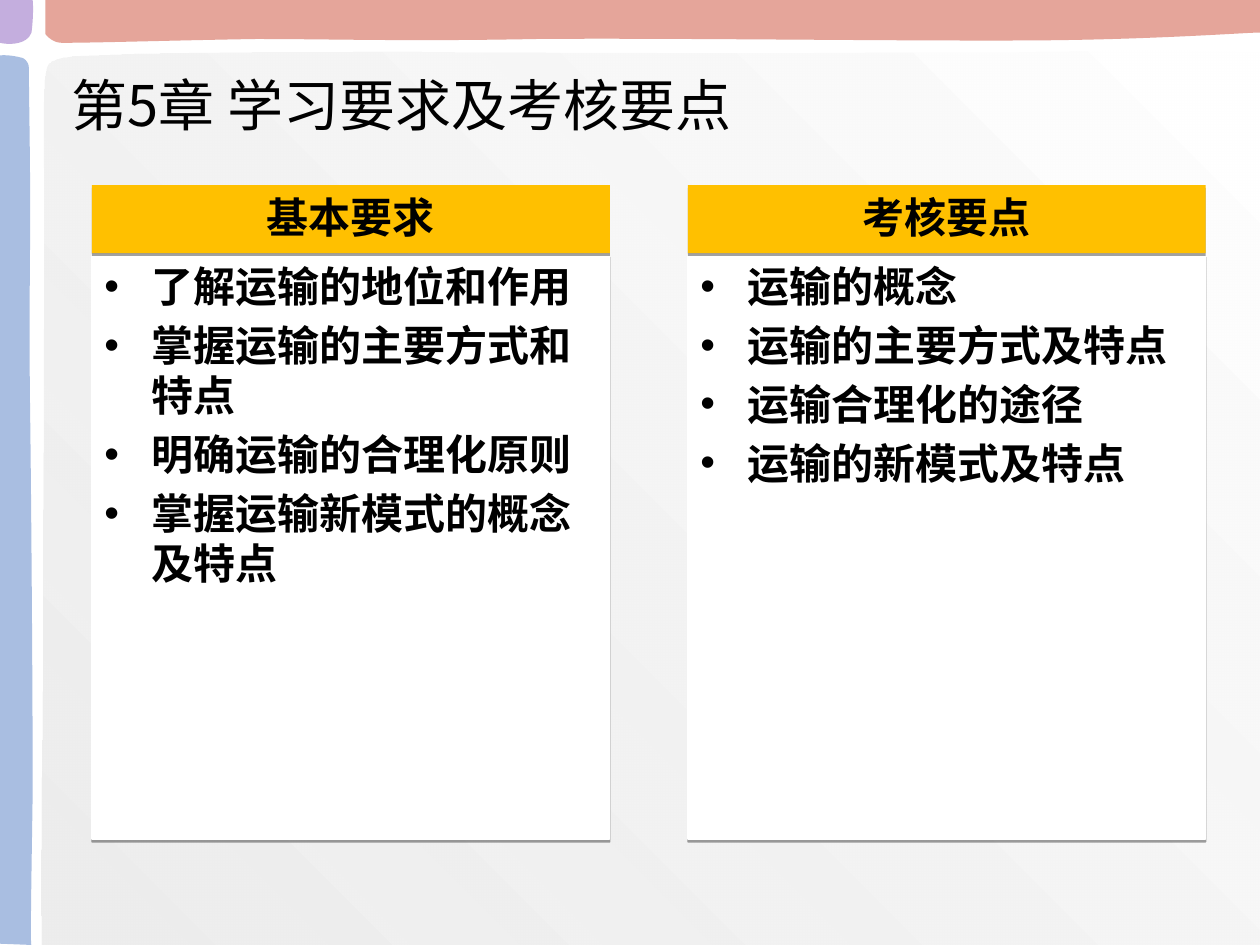
import pptx
import pptx.dml.color
import pptx.enum.shapes
import pptx.enum.text
import pptx.oxml
import pptx.oxml.ns
import pptx.util

COLUMNS, ROWS = 10, 7.5
UNIT = pptx.util.Inches(1)
HEADER_ROWS, BODY_OFFSET = 0.54, 0.55
TITLE_FONT, PANEL_FONT = "Noto Sans CJK JP", "Noto Sans CJK SC"
COLORS = {
    "ink": "000000", "paper": "FFFFFF", "shade": "E6E6E6", "header": "FFC000",
    "top": "DA7F70", "side": "85A3D5", "corner": "AC8CD0",
}

BACKDROP = [
    (10, 7.5), (10, 0.42), (8.86, 0.38, 8.55, 0.42, 7.6, 0.42),
    (6.66, 0.42, 5.5, 0.43, 4.33, 0.42), (3.16, 0.41, 1.23, 0.41, 0.57, 0.45),
    (0.36, 0.48, 0.36, 0.49, 0.35, 0.73), (0.34, 0.96, 0.35, 1.1, 0.35, 1.82),
    (0.35, 2.56, 0.34, 4.12, 0.34, 5.06), (0.34, 6.01, 0.32, 6.62, 0.33, 7.5),
    (5.17, 7.5, 10, 7.5, 10, 7.5),
]
BANDS = {
    "top": [
        (10, 0), (10, 0.26), (10.01, 0.25, 9.28, 0.31, 8.32, 0.32),
        (7.36, 0.33, 5.31, 0.3, 4.26, 0.31), (3.21, 0.33, 2.65, 0.31, 2.03, 0.31),
        (1.4, 0.32, 0.77, 0.34, 0.49, 0.34), (0.41, 0.34, 0.36, 0.27, 0.36, 0.27),
        (0.36, 0.27, 0.36, 0.14, 0.36, 0), (10, 0),
    ],
    "side": [
        (0, 7.49), (0.25, 7.5), (0.24, 7.51, 0.25, 6.98, 0.26, 6.28),
        (0.26, 5.58, 0.25, 4.07, 0.24, 3.3), (0.23, 2.54, 0.24, 2.12, 0.24, 1.67),
        (0.24, 1.21, 0.23, 0.75, 0.23, 0.54), (0.23, 0.48, 0.18, 0.46, 0.18, 0.46),
        (0.07, 0.43, 0, 0.44, 0, 0.44), (0, 7.49),
    ],
    "corner": [
        (0, 0), (0.26, 0), (0.27, 0.12, 0.25, 0.26, 0.25, 0.26),
        (0.23, 0.31, 0.19, 0.33, 0.15, 0.34), (0.07, 0.36, 0, 0.34, 0, 0.34), (0, 0),
    ],
}
PANELS = [
    ("基本要求", ["了解运输的地位和作用", "掌握运输的主要方式和特点",
              "明确运输的合理化原则", "掌握运输新模式的概念及特点"]),
    ("考核要点", ["运输的概念", "运输的主要方式及特点", "运输合理化的途径", "运输的新模式及特点"]),
]


def color(name):
    return pptx.dml.color.RGBColor.from_string(COLORS[name])


def place(box):
    return [round(value * UNIT) for value in box]


def add_xml(parent, markup):
    parent.append(pptx.oxml.parse_xml(markup.replace(" ", f" {pptx.oxml.ns.nsdecls('a')} ", 1)))


def set_alpha(element, percent):
    for rgb in element.iter(pptx.oxml.ns.qn("a:srgbClr")):
        add_xml(rgb, f'<a:alpha val="{percent * 1000}"/>')


def bend_lines(outline, segments):
    lines = iter(list(outline._element.iter(pptx.oxml.ns.qn("a:lnTo"))))
    for segment in segments:
        group = [next(lines) for _ in range(len(segment) // 2)]
        if len(group) == 3:
            curve = pptx.oxml.parse_xml(f"<a:cubicBezTo {pptx.oxml.ns.nsdecls('a')}/>")
            group[0].addprevious(curve)
            for line in group:
                curve.append(line[0])
                line.getparent().remove(line)


def add_outline(page, box, segments):
    points = [((box[0] + segment[i]) * 1000, (box[1] + segment[i + 1]) * 1000)
              for segment in segments for i in range(0, len(segment), 2)]
    builder = page.shapes.build_freeform(*points[0], scale=UNIT / 1000)
    builder.add_line_segments(points[1:], close=False)
    outline = builder.convert_to_shape()
    bend_lines(outline, segments[1:])
    trail = next(outline._element.iter(pptx.oxml.ns.qn("a:path")))
    trail.add_close()
    outline.shadow.inherit = False
    outline.line.fill.background()
    return outline


def add_frame(page, box):
    backdrop = add_outline(page, box, BACKDROP)
    backdrop.fill.gradient()
    backdrop.fill.gradient_angle = 45
    for stop, name in zip(backdrop.fill.gradient_stops, ("shade", "paper")):
        stop.color.rgb = color(name)
    set_alpha(backdrop.fill.gradient_stops[0]._gs, 70)
    for name, segments in BANDS.items():
        band = add_outline(page, box, segments)
        band.fill.solid()
        band.fill.fore_color.rgb = color(name)
        set_alpha(band._element.spPr, 70)


def write(shape, lines, size=24, font=PANEL_FONT, bold=True, bullets=False,
          align=pptx.enum.text.PP_ALIGN.LEFT, anchor=pptx.enum.text.MSO_ANCHOR.TOP):
    frame = shape.text_frame
    frame.word_wrap = True
    frame.vertical_anchor = anchor
    for index, line in enumerate(lines):
        para = frame.add_paragraph() if index else frame.paragraphs[0]
        para.alignment = align
        if index:
            para.space_before = pptx.util.Pt(size * 0.2)
        if bullets:
            properties = para._p.get_or_add_pPr()
            indent = round(0.375 * UNIT)
            properties.set("marL", str(indent))
            properties.set("indent", str(-indent))
            add_xml(properties, '<a:buFont typeface="Arial"/>')
            add_xml(properties, '<a:buChar char="•"/>')
        span = para.add_run()
        span.text = line
        span.font.size = pptx.util.Pt(size)
        span.font.bold = bold
        span.font.name = font
        span.font.color.rgb = color("ink")
        add_xml(span._r.get_or_add_rPr(), f'<a:ea typeface="{font}"/>')


def add_card(page, box, fill, outlined=False):
    card = page.shapes.add_shape(pptx.enum.shapes.MSO_SHAPE.RECTANGLE, *place(box))
    card.fill.solid()
    card.fill.fore_color.rgb = color(fill)
    if outlined:
        card.line.color.rgb = color("paper")
        card.line.width = pptx.util.Pt(0.75)
    else:
        card.line.fill.background()
    card.shadow.inherit = False
    effects = card._element.spPr.find(pptx.oxml.ns.qn("a:effectLst"))
    distance = pptx.util.Pt(1.6)
    add_xml(effects, f'<a:outerShdw blurRad="0" dist="{distance}" dir="5400000" rotWithShape="0">'
                     f'<a:srgbClr val="{COLORS["ink"]}"/></a:outerShdw>')
    set_alpha(effects, 37)
    return card


def add_panel(page, box, heading, points):
    left, top, width, height = box
    body = add_card(page, (left, top + BODY_OFFSET, width, height - BODY_OFFSET),
                    "paper", outlined=True)
    write(body, points, bullets=True)
    header = add_card(page, (left, top, width, HEADER_ROWS), "header")
    write(header, [heading], align=pptx.enum.text.PP_ALIGN.CENTER)


def add_title(page, box, text):
    write(page.shapes.add_textbox(*place(box)), [text], size=32, font=TITLE_FONT,
          bold=False, anchor=pptx.enum.text.MSO_ANCHOR.MIDDLE)


def main():
    deck = pptx.Presentation()
    deck.slide_width, deck.slide_height = place((COLUMNS, ROWS))
    page = deck.slides.add_slide(deck.slide_layouts[6])
    add_frame(page, (0, 0, COLUMNS, ROWS))
    add_title(page, (0.47, 0.31, 5.87, 1.03), "第5章 学习要求及考核要点")
    for index, (heading, points) in enumerate(PANELS):
        add_panel(page, (0.73 + index * 4.73, 1.47, 4.11, 5.19), heading, points)
    deck.save("out.pptx")


if __name__ == "__main__":
    main()
